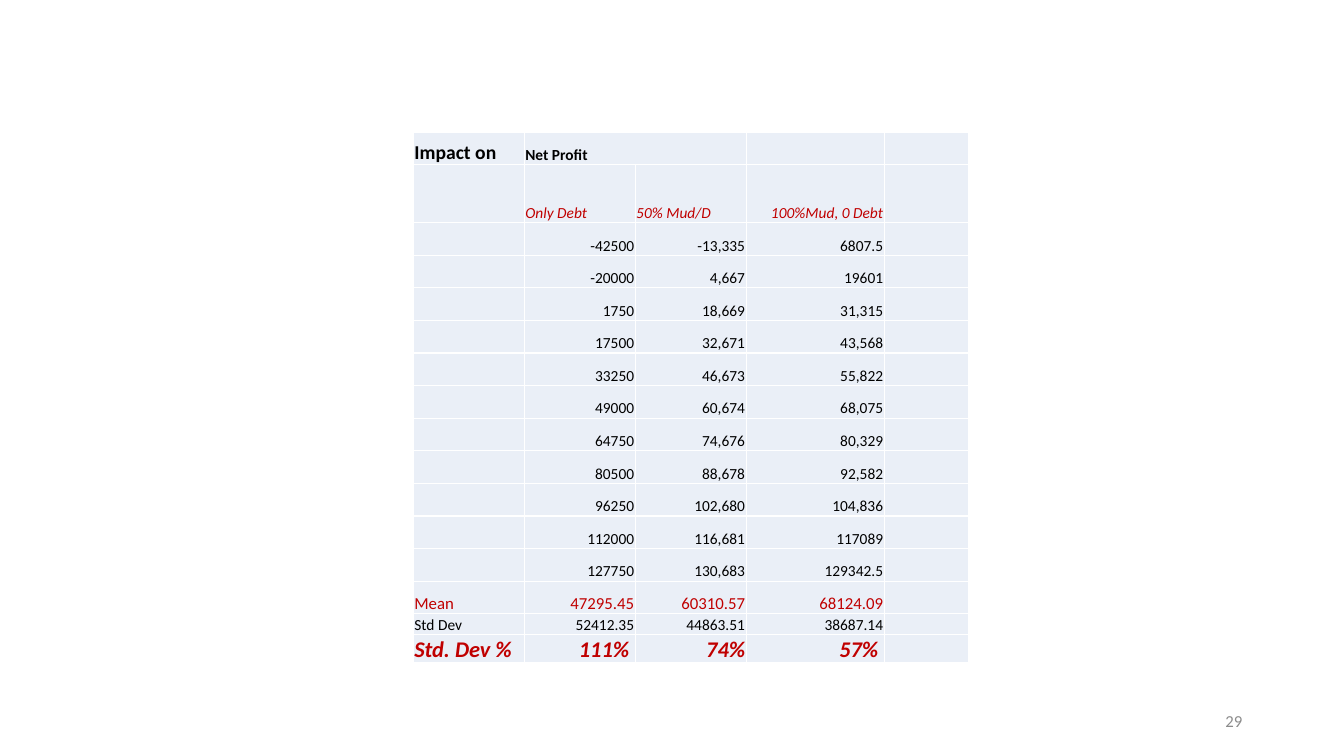
from dataclasses import dataclass

from lxml.etree import SubElement
from pptx import Presentation
from pptx.dml.color import RGBColor as RGB
from pptx.enum.text import MSO_ANCHOR as Anchor, PP_ALIGN as Align
from pptx.oxml.ns import qn
from pptx.util import Inches, Pt


@dataclass(frozen=True)
class Theme:
    font: str = "Calibri"
    black: RGB = RGB(0x00, 0x00, 0x00)
    red: RGB = RGB(0xC0, 0x00, 0x00)
    grey: RGB = RGB(0x8C, 0x8C, 0x8C)
    cell: RGB = RGB(0xEA, 0xEF, 0xF7)
    border: RGB = RGB(0xFF, 0xFF, 0xFF)
    small: int = 11
    medium: int = 12
    title: int = 14
    large: int = 16


T = Theme()


@dataclass(frozen=True)
class Style:
    size: int = T.small
    color: RGB = T.black
    bold: bool = False
    italic: bool = False


@dataclass(frozen=True)
class Row:
    height: float
    texts: tuple[str, ...]
    style: Style = Style()


WIDTH, HEIGHT = 13.33, 7.5
LEFT, TOP, TABLE_HEIGHT = 4.1, 1.31, 5.27
COLS = (1.1, 1.1, 1.1, 1.37, 0.84)
HEAD, SUBHEAD, DEVIATION, PERCENT = 0.32, 0.58, 0.21, 0.28

PROFITS = (
    ("-42500", "-13,335", "6807.5"),
    ("-20000", "4,667", "19601"),
    ("1750", "18,669", "31,315"),
    ("17500", "32,671", "43,568"),
    ("33250", "46,673", "55,822"),
    ("49000", "60,674", "68,075"),
    ("64750", "74,676", "80,329"),
    ("80500", "88,678", "92,582"),
    ("96250", "102,680", "104,836"),
    ("112000", "116,681", "117089"),
    ("127750", "130,683", "129342.5"),
)
BODY = (TABLE_HEIGHT - HEAD - SUBHEAD - DEVIATION - PERCENT) / (len(PROFITS) + 1)

ROWS = (
    Row(HEAD, ("Impact on", "Net Profit", "", ""), Style(bold=True)),
    Row(SUBHEAD, ("", "Only Debt", "50% Mud/D", "100%Mud, 0 Debt"),
        Style(color=T.red, italic=True)),
    *(Row(BODY, ("", *profits)) for profits in PROFITS),
    Row(BODY, ("Mean", "47295.45", "60310.57", "68124.09"), Style(T.medium, T.red)),
    Row(DEVIATION, ("Std Dev", "52412.35", "44863.51", "38687.14")),
    Row(PERCENT, ("Std. Dev %", "111% ", "74%", "57% "),
        Style(T.large, T.red, True, True)),
)


def write(tf, text: str, style: Style, align: Align) -> None:
    p = tf.paragraphs[0]
    p.text = text
    p.alignment = align
    for r in p.runs:
        r.font.name = T.font
        r.font.size = Pt(style.size)
        r.font.bold = style.bold
        r.font.italic = style.italic
        r.font.color.rgb = style.color
    if not text:
        SubElement(p._p, qn("a:endParaRPr"), sz=str(T.small * 100))


def format_cell(cell) -> None:
    cell.margin_left = cell.margin_right = cell.margin_top = Inches(0.01)
    cell.margin_bottom = 0
    cell.vertical_anchor = Anchor.BOTTOM
    props = cell._tc.get_or_add_tcPr()
    for side in ("lnL", "lnR", "lnT", "lnB"):
        line = SubElement(props, qn(f"a:{side}"), w=str(Pt(1)))
        fill = SubElement(line, qn("a:solidFill"))
        SubElement(fill, qn("a:srgbClr"), val=str(T.border))
    cell.fill.solid()
    cell.fill.fore_color.rgb = T.cell


def cell_align(row: int, col: int) -> Align:
    is_label = col == 0 or row == 0 or (row == 1 and col < 3)
    return Align.LEFT if is_label else Align.RIGHT


def add_profit_table(s) -> None:
    frame = s.shapes.add_table(len(ROWS), len(COLS), Inches(LEFT), Inches(TOP),
                               Inches(sum(COLS)), Inches(TABLE_HEIGHT))
    table = frame.table
    table.first_row = table.horz_banding = False
    for column, width in zip(table.columns, COLS):
        column.width = Inches(width)
    for i, row in enumerate(ROWS):
        table.rows[i].height = Inches(row.height)
        for j, text in enumerate((*row.texts, "")):
            cell = table.cell(i, j)
            format_cell(cell)
            write(cell.text_frame, text, row.style, cell_align(i, j))
    table.cell(0, 1).merge(table.cell(0, 2))
    table.cell(0, 0).text_frame.paragraphs[0].runs[0].font.size = Pt(T.title)


def add_page_number(s, number: str) -> None:
    box = s.shapes.add_textbox(Inches(9.42), Inches(6.95), Inches(3), Inches(0.4))
    tf = box.text_frame
    tf.word_wrap = True
    tf.vertical_anchor = Anchor.MIDDLE
    write(tf, number, Style(T.medium, T.grey), Align.RIGHT)


def main() -> None:
    prs = Presentation()
    prs.slide_width, prs.slide_height = Inches(WIDTH), Inches(HEIGHT)
    s = prs.slides.add_slide(prs.slide_layouts[6])
    add_page_number(s, "29")
    add_profit_table(s)
    prs.save("out.pptx")


if __name__ == "__main__":
    main()
